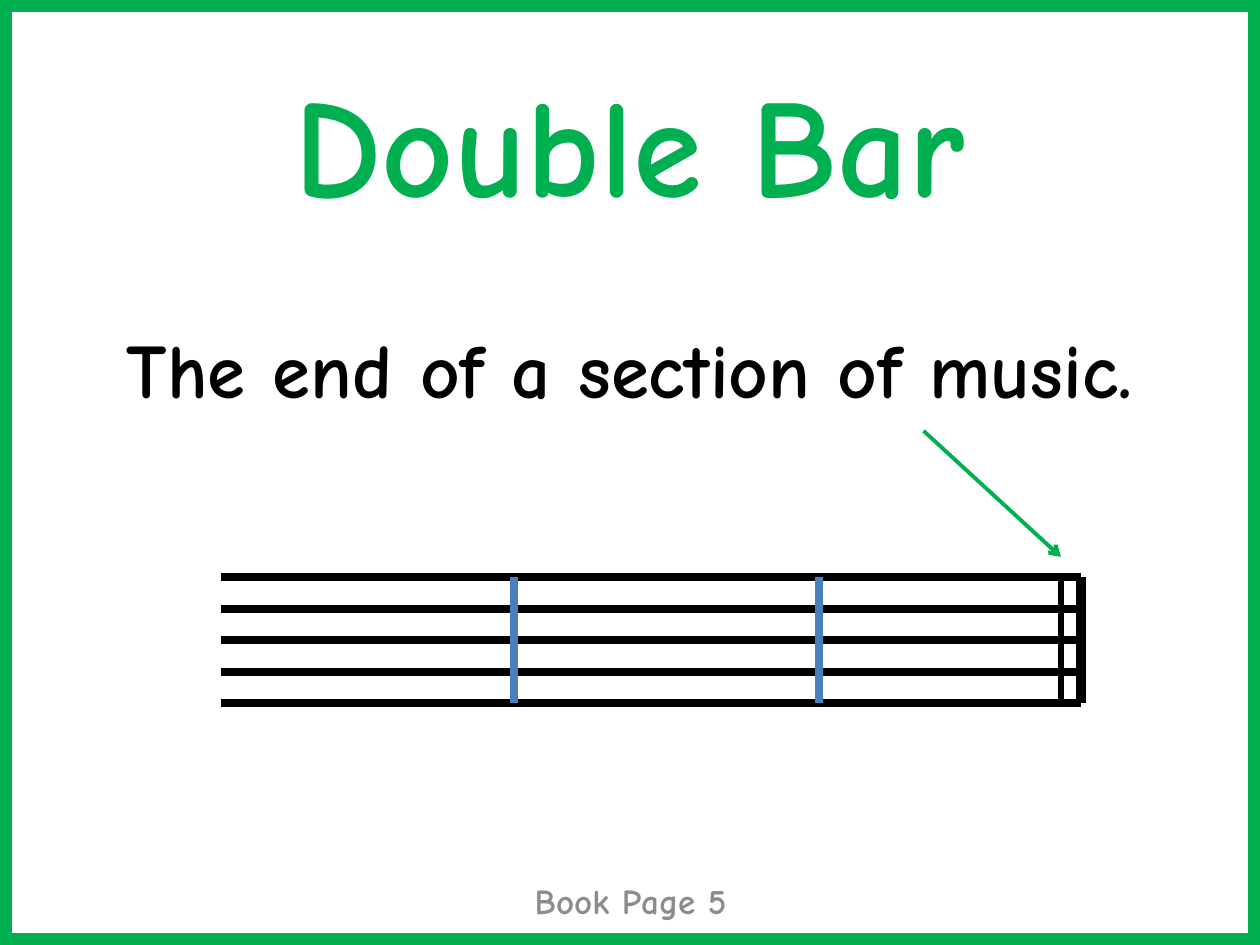
from dataclasses import dataclass

import lxml.etree
import pptx
import pptx.dml.color
import pptx.enum.shapes
import pptx.enum.text
import pptx.oxml.ns
import pptx.util

Inches = pptx.util.Inches


@dataclass(frozen=True)
class Theme:
    """Colours, font and sizes of the deck."""

    font: str = "Comic Neue"
    accent: str = "00B050"
    ink: str = "000000"
    muted: str = "8C8C8C"
    bar: str = "4B7EBC"
    title_size: int = 80
    body_size: int = 44
    footer_size: int = 20
    border_width: float = 14
    staff_width: float = 4.5
    thin_width: float = 3
    thick_width: float = 6
    arrow_width: float = 2.25


@dataclass(frozen=True)
class Box:
    """A region of the page in inches."""

    left: float
    top: float
    width: float
    height: float

    def lengths(self):
        """Return left, top, width and height as lengths."""
        return [Inches(side) for side in (self.left, self.top, self.width, self.height)]


THEME = Theme()


def rgb(colour):
    """Turn a hex string into a colour."""
    return pptx.dml.color.RGBColor.from_string(colour)


def add_border(page, box):
    """Frame the box with an unfilled rectangle."""
    border = page.shapes.add_shape(
        pptx.enum.shapes.MSO_SHAPE.RECTANGLE, *box.lengths()
    )
    border.shadow.inherit = False
    border.fill.background()
    border.line.color.rgb = rgb(THEME.accent)
    border.line.width = pptx.util.Pt(THEME.border_width)


def add_caption(page, box, text, size, colour, anchor):
    """Write one centred bold line in the box."""
    frame = page.shapes.add_textbox(*box.lengths()).text_frame
    frame.word_wrap = True
    frame.vertical_anchor = anchor
    frame.text = text
    paragraph = frame.paragraphs[0]
    paragraph.alignment = pptx.enum.text.PP_ALIGN.CENTER
    font = paragraph.runs[0].font
    font.name = THEME.font
    font.size = pptx.util.Pt(size)
    font.bold = True
    font.color.rgb = rgb(colour)


def add_line(page, start, end, colour, width):
    """Draw a straight line without shadow."""
    line = page.shapes.add_connector(
        pptx.enum.shapes.MSO_CONNECTOR.STRAIGHT,
        *[Inches(value) for value in (*start, *end)],
    )
    line.line.color.rgb = rgb(colour)
    line.line.width = pptx.util.Pt(width)
    lxml.etree.SubElement(line._element.spPr, pptx.oxml.ns.qn("a:effectLst"))
    return line


def add_staff(page, box):
    """Draw five staff lines, two bar lines and the closing double bar."""
    right = box.left + box.width
    bottom = box.top + box.height
    for step in range(5):
        y = box.top + step * box.height / 4
        add_line(page, (box.left, y), (right, y), THEME.ink, THEME.staff_width)
    bars = [
        (2.33, THEME.bar, THEME.staff_width),
        (4.75, THEME.bar, THEME.staff_width),
        (box.width - 0.16, THEME.ink, THEME.thin_width),
        (box.width, THEME.ink, THEME.thick_width),
    ]
    for offset, colour, width in bars:
        x = box.left + offset
        add_line(page, (x, box.top), (x, bottom), colour, width)


def add_pointer(page, box):
    """Draw an arrow from the top left to the bottom right of the box."""
    arrow = add_line(
        page,
        (box.left, box.top),
        (box.left + box.width, box.top + box.height),
        THEME.accent,
        THEME.arrow_width,
    )
    outline = arrow.line._get_or_add_ln()
    lxml.etree.SubElement(outline, pptx.oxml.ns.qn("a:tailEnd"), type="arrow")


def main():
    """Build the slide and save it."""
    deck = pptx.Presentation()
    deck.slide_width = Inches(10)
    deck.slide_height = Inches(7.5)
    page = deck.slides.add_slide(deck.slide_layouts[6])
    anchor = pptx.enum.text.MSO_ANCHOR
    add_caption(page, Box(0.25, 0.5, 9.5, 1.25), "Double Bar",
                THEME.title_size, THEME.accent, anchor.MIDDLE)
    add_border(page, Box(0, 0, 10, 7.5))
    add_caption(page, Box(3.42, 6.95, 3.17, 0.4), "Book Page 5",
                THEME.footer_size, THEME.muted, anchor.MIDDLE)
    add_caption(page, Box(0.75, 2.5, 8.5, 1.58), "The end of a section of music.",
                THEME.body_size, THEME.ink, anchor.TOP)
    add_staff(page, Box(1.75, 4.58, 6.83, 1))
    add_pointer(page, Box(7.33, 3.42, 1.09, 1))
    deck.save("out.pptx")


if __name__ == "__main__":
    main()
